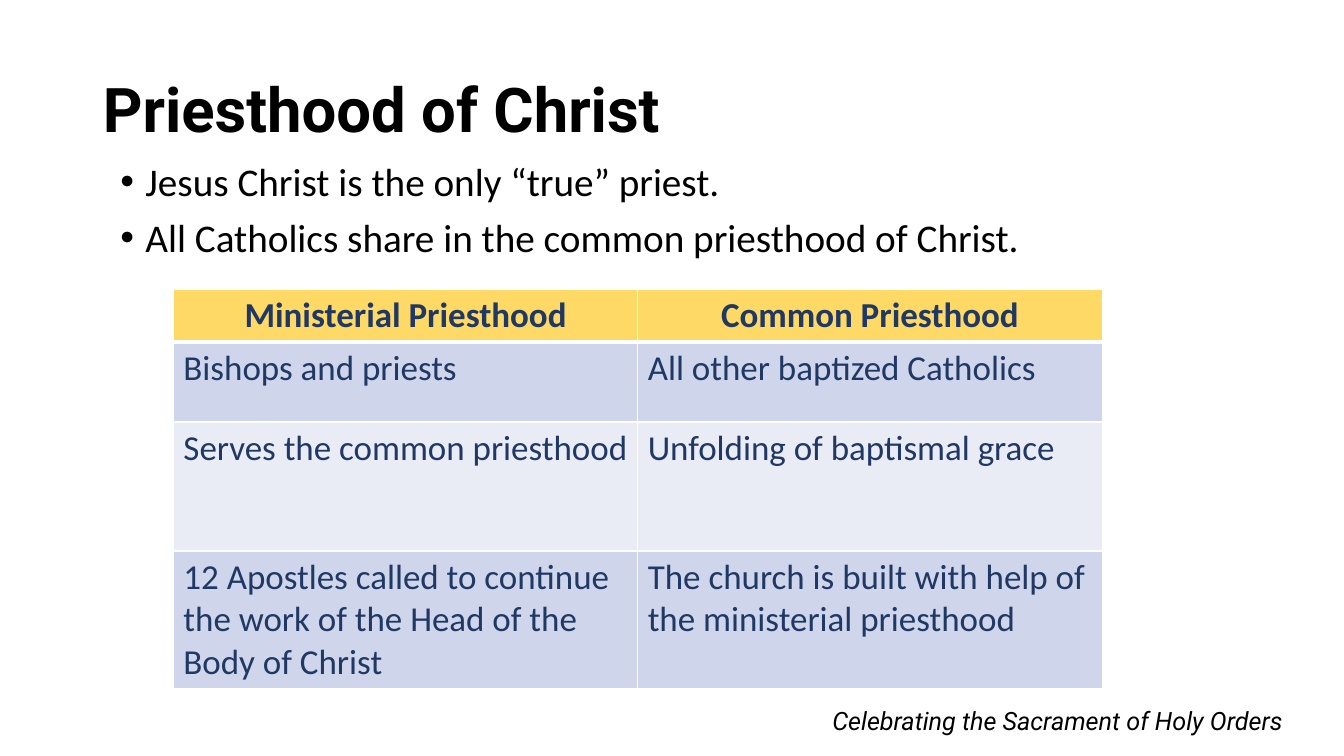
from lxml import etree
from pptx import Presentation
from pptx.dml.color import RGBColor
from pptx.enum.text import MSO_ANCHOR, MSO_AUTO_SIZE, PP_ALIGN
from pptx.oxml.ns import qn
from pptx.util import Inches, Pt

LEFT, CENTER, RIGHT = PP_ALIGN.LEFT, PP_ALIGN.CENTER, PP_ALIGN.RIGHT
TOP, MIDDLE = MSO_ANCHOR.TOP, MSO_ANCHOR.MIDDLE
NO_FIT = MSO_AUTO_SIZE.NONE
TITLE_AND_CONTENT = 1

WIDTH, HEIGHT = 13.33, 7.5
COLORS = {
    "text": "000000",
    "table text": "203864",
    "header": "FFD966",
    "odd row": "CFD5EA",
    "even row": "E9EBF5",
    "border": "FFFFFF",
}
BULLETS = [
    "Jesus Christ is the only “true” priest.",
    "All Catholics share in the common priesthood of Christ.",
]
PRIESTHOODS = [
    ("Ministerial Priesthood", "Common Priesthood"),
    ("Bishops and priests", "All other baptized Catholics"),
    ("Serves the common priesthood", "Unfolding of baptismal grace"),
    ("12 Apostles called to continue the work of the Head of the Body of Christ",
     "The church is built with help of the ministerial priesthood"),
]
ROW_HEIGHTS = [0.49, 0.79, 1.28, 1.28]


def area(left, top, width, height):
    """Turn shares of the slide's size into lengths."""
    return (Inches(left * WIDTH), Inches(top * HEIGHT),
            Inches(width * WIDTH), Inches(height * HEIGHT))


def write(para, text, size, font="Calibri", color="text", bold=False,
          italic=False, align=LEFT, line_spacing=None, space_before=0):
    para.alignment = align
    para.line_spacing = line_spacing
    para.space_before = Pt(space_before)
    span = para.add_run()
    span.text = text
    span.font.size = Pt(size)
    span.font.name = font
    span.font.bold = bold
    span.font.italic = italic
    span.font.color.rgb = RGBColor.from_string(COLORS[color])


def add_bullet(para, indent=0.25):
    properties = para._p.get_or_add_pPr()
    properties.set("marL", str(Inches(indent)))
    properties.set("indent", str(-Inches(indent)))
    etree.SubElement(properties, qn("a:buFont"), typeface="Arial")
    etree.SubElement(properties, qn("a:buChar"), char="•")


def place(box, bounds, anchor):
    box.left, box.top, box.width, box.height = bounds
    frame = box.text_frame
    frame.word_wrap = True
    frame.auto_size = NO_FIT
    frame.vertical_anchor = anchor
    return frame


def add_title(page, text):
    frame = place(page.shapes.title, area(0.069, 0.053, 0.863, 0.193), MIDDLE)
    write(frame.paragraphs[0], text, 44, font="Roboto", bold=True, line_spacing=0.9)


def add_list(page, items):
    frame = place(page.placeholders[1], area(0.082, 0.208, 0.863, 0.635), TOP)
    for index, item in enumerate(items):
        para = frame.add_paragraph() if index else frame.paragraphs[0]
        add_bullet(para)
        write(para, item, 28, line_spacing=0.9, space_before=10 if index else 0)


def add_footer(page, text):
    bounds = area(0.499, 0.927, 0.463, 0.053)
    frame = place(page.shapes.add_textbox(*bounds), bounds, TOP)
    write(frame.paragraphs[0], text, 18, font="Roboto", italic=True, align=RIGHT)


def add_borders(cell, bottom):
    properties = cell._tc.get_or_add_tcPr()
    for side, points in (("L", 1), ("R", 1), ("T", 1), ("B", bottom)):
        line = etree.SubElement(properties, qn(f"a:ln{side}"), w=str(Pt(points)))
        fill = etree.SubElement(line, qn("a:solidFill"))
        etree.SubElement(fill, qn("a:srgbClr"), val=COLORS["border"])


def add_comparison(page, rows):
    bounds = area(0.129, 0.383, 0.691, sum(ROW_HEIGHTS) / HEIGHT)
    table = page.shapes.add_table(len(rows), len(rows[0]), *bounds).table
    for index, (texts, height) in enumerate(zip(rows, ROW_HEIGHTS)):
        header = index == 0
        fill = "header" if header else "odd row" if index % 2 else "even row"
        table.rows[index].height = Inches(height)
        for cell, text in zip(table.rows[index].cells, texts):
            add_borders(cell, bottom=3 if header else 1)
            cell.fill.solid()
            cell.fill.fore_color.rgb = RGBColor.from_string(COLORS[fill])
            write(cell.text_frame.paragraphs[0], text, 25, color="table text",
                  bold=header, align=CENTER if header else LEFT)


def main():
    deck = Presentation()
    deck.slide_width, deck.slide_height = Inches(WIDTH), Inches(HEIGHT)
    page = deck.slides.add_slide(deck.slide_layouts[TITLE_AND_CONTENT])
    add_title(page, "Priesthood of Christ")
    add_list(page, BULLETS)
    add_footer(page, "Celebrating the Sacrament of Holy Orders")
    add_comparison(page, PRIESTHOODS)
    deck.save("out.pptx")


if __name__ == "__main__":
    main()
